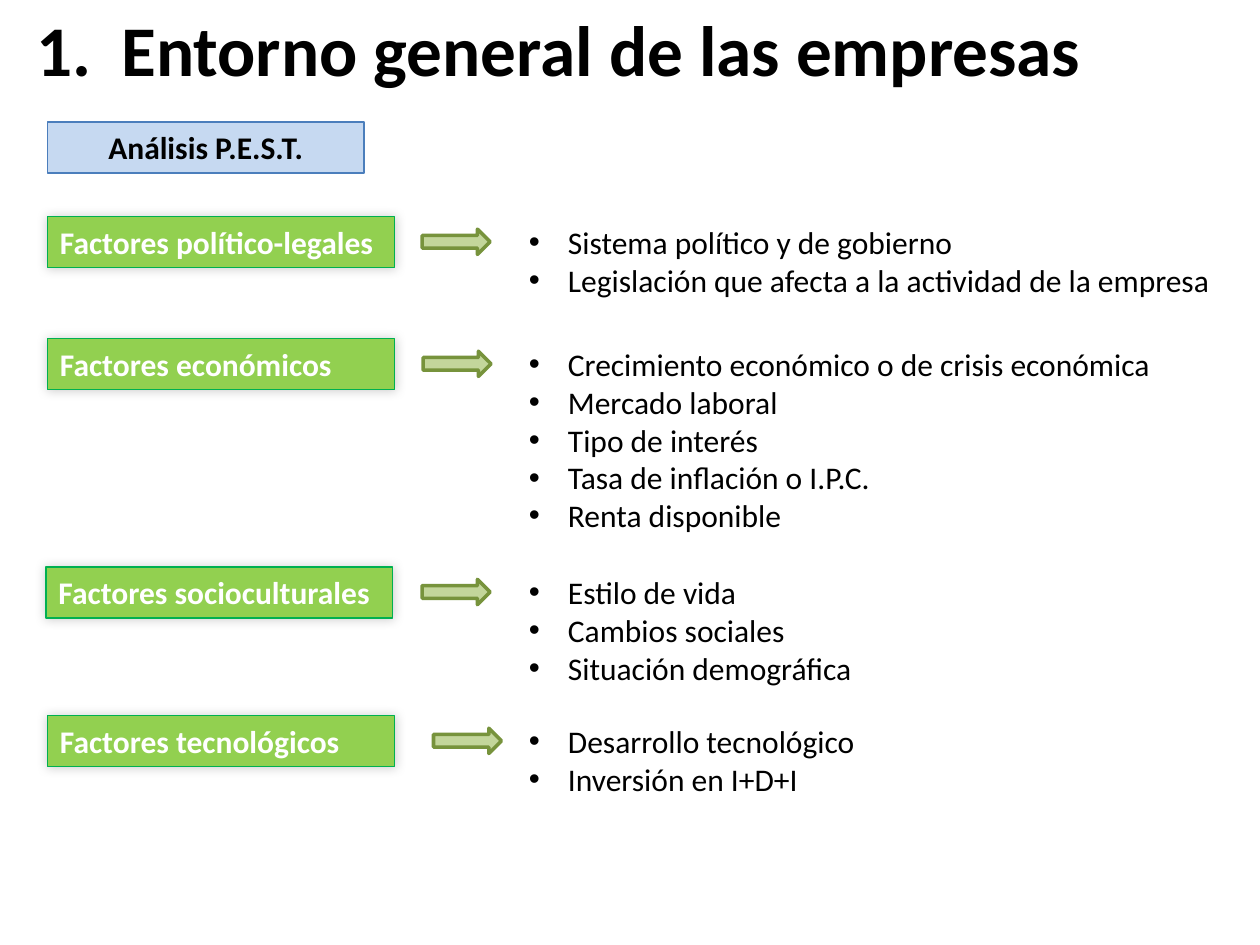
from pptx import Presentation
from pptx.dml.color import RGBColor
from pptx.enum.shapes import MSO_SHAPE
from pptx.enum.text import MSO_ANCHOR, MSO_AUTO_SIZE, PP_ALIGN
from pptx.oxml import parse_xml
from pptx.oxml.ns import nsdecls, qn
from pptx.util import Cm, Pt


def color(code):
    return RGBColor.from_string(code)


def node(body):
    tag, rest = body.split(" ", 1)
    return parse_xml(f"<a:{tag} {nsdecls('a')} {rest}")


class Deck:
    font = "Calibri"
    size = 18
    black, white = "000000", "FFFFFF"

    def __init__(self, wide, high):
        self.file = Presentation()
        self.file.slide_width, self.file.slide_height = Cm(wide), Cm(high)
        self.slide = self.file.slides.add_slide(self.file.slide_layouts[6])

    def add_text(self, para, text, ink, bold=False, size=None):
        run = para.add_run()
        run.text = text
        run.font.name = self.font
        run.font.size = Pt(size or self.size)
        run.font.bold = bold
        run.font.color.rgb = color(ink)

    def shape(self, kind, area, fill, line, width):
        item = self.slide.shapes.add_shape(kind, *map(Cm, area))
        item.shadow.inherit = False
        item.fill.solid()
        item.fill.fore_color.rgb = color(fill)
        item.line.color.rgb = color(line)
        item.line.width = Pt(width)
        return item

    def label(self, area, text, fill, line, ink, align):
        item = self.shape(MSO_SHAPE.RECTANGLE, area, fill, line, 0.75)
        frame = item.text_frame
        frame.word_wrap = True
        frame.auto_size = MSO_AUTO_SIZE.SHAPE_TO_FIT_TEXT
        frame.vertical_anchor = MSO_ANCHOR.TOP
        para = frame.paragraphs[0]
        para.alignment = align
        self.add_text(para, text, ink, True)
        return item

    def glow(self, item):
        effects = item._element.spPr.find(qn("a:effectLst"))
        effects.append(node(
            'outerShdw blurRad="76200" dist="0" dir="13500000" rotWithShape="0">'
            '<a:srgbClr val="000000"><a:alpha val="20000"/></a:srgbClr>'
            '</a:outerShdw>'))

    def arrow(self, area):
        self.shape(MSO_SHAPE.RIGHT_ARROW, area, "C3D69B", "77933C", 2)

    def box(self, area):
        frame = self.slide.shapes.add_textbox(*map(Cm, area)).text_frame
        frame.word_wrap = True
        return frame

    def title(self, area, mark, text, gap):
        frame = self.box(area)
        frame.vertical_anchor = MSO_ANCHOR.MIDDLE
        para = frame.paragraphs[0]
        para._p.get_or_add_pPr().append(node(
            f'tabLst ><a:tab pos="{Cm(gap)}" algn="l"/></a:tabLst>'))
        self.add_text(para, f"{mark}\t{text}", self.black, True, 40.7)

    def points(self, area, lines):
        frame = self.box(area)
        frame.auto_size = MSO_AUTO_SIZE.SHAPE_TO_FIT_TEXT
        for i, text in enumerate(lines):
            para = frame.add_paragraph() if i else frame.paragraphs[0]
            props = para._p.get_or_add_pPr()
            props.set("marL", str(Cm(0.79)))
            props.set("indent", str(-Cm(0.79)))
            props.append(node('buFont typeface="Arial"/>'))
            props.append(node('buChar char="•"/>'))
            self.add_text(para, text, self.black)


# Label, top, left of label, left of arrow, points
FACTORS = [
    ("Factores político-legales", 4.37, 0.96, 8.51,
     ["Sistema político y de gobierno",
      "Legislación que afecta a la actividad de la empresa"]),
    ("Factores económicos", 6.83, 0.96, 8.53,
     ["Crecimiento económico o de crisis económica", "Mercado laboral",
      "Tipo de interés", "Tasa de inflación o I.P.C.", "Renta disponible"]),
    ("Factores socioculturales", 11.43, 0.93, 8.51,
     ["Estilo de vida", "Cambios sociales", "Situación demográfica"]),
    ("Factores tecnológicos", 14.43, 0.96, 8.74,
     ["Desarrollo tecnológico", "Inversión en I+D+I"]),
]


def main():
    deck = Deck(25.4, 19.05)

    # Heading
    deck.title((0.48, 0, 22.86, 1.93), "1.", "Entorno general de las empresas", 1.72)
    deck.label((0.96, 2.46, 6.38, 1.03), "Análisis P.E.S.T.",
               "C6D9F1", "4B7EBC", deck.black, PP_ALIGN.CENTER)

    # One band per factor
    for name, top, left, tip, lines in FACTORS:
        item = deck.label((left, top, 6.99, 1.03), name,
                          "92D050", "00B050", deck.white, PP_ALIGN.LEFT)
        deck.glow(item)
        deck.arrow((tip, top + 0.25, 1.37, 0.51))
        deck.points((10.41, top, 14.3, 0.26 + 0.77 * len(lines)), lines)

    deck.file.save("out.pptx")


if __name__ == "__main__":
    main()
